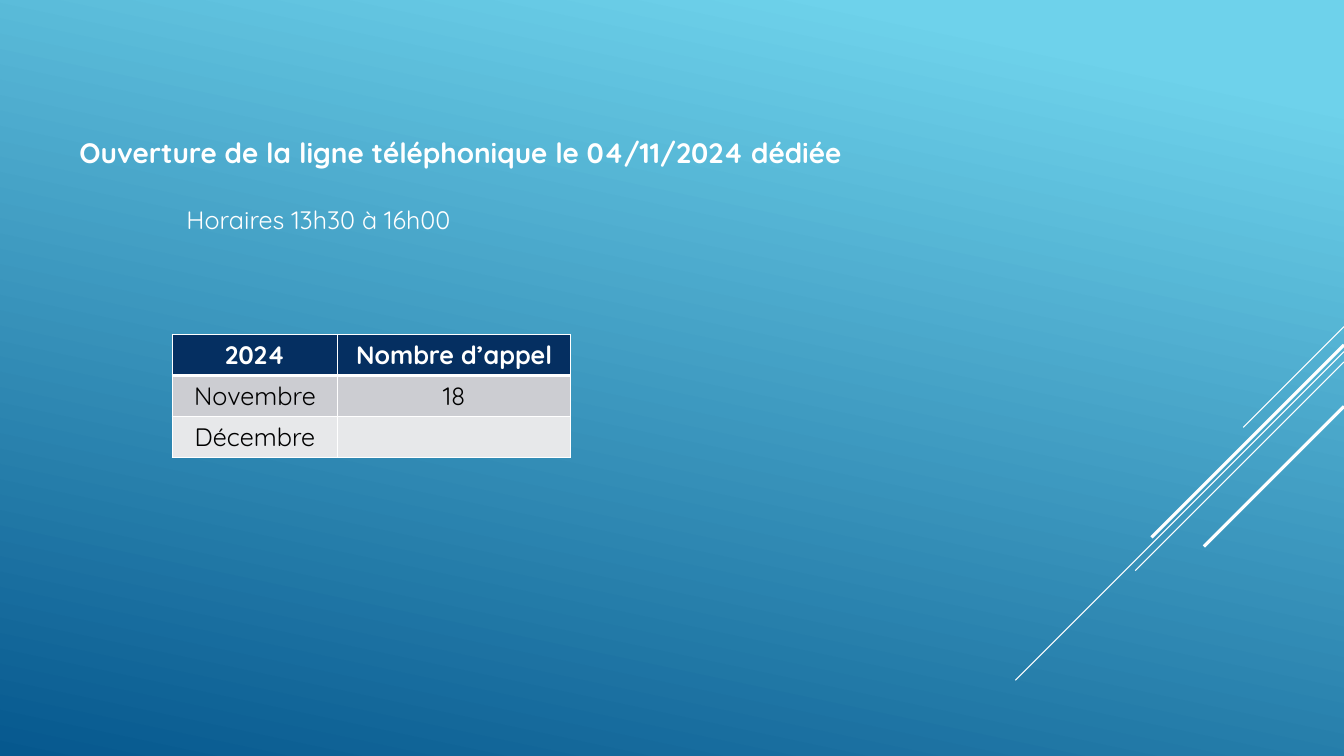
"""Build a slide announcing the opening of a telephone line, with its call counts."""
from dataclasses import dataclass

from lxml import etree
from pptx import Presentation
from pptx.dml.color import RGBColor
from pptx.enum.shapes import MSO_CONNECTOR
from pptx.enum.text import MSO_AUTO_SIZE, PP_ALIGN
from pptx.oxml.ns import qn
from pptx.slide import Slide
from pptx.table import _Cell
from pptx.text.text import TextFrame
from pptx.util import Cm, Pt

STRAIGHT = MSO_CONNECTOR.STRAIGHT
FIT_SHAPE = MSO_AUTO_SIZE.SHAPE_TO_FIT_TEXT
LEFT = PP_ALIGN.LEFT
CENTER = PP_ALIGN.CENTER

WHITE = RGBColor(0xFF, 0xFF, 0xFF)
BLACK = RGBColor(0x00, 0x00, 0x00)
NAVY = RGBColor(0x05, 0x2F, 0x61)
DARK_BAND = RGBColor(0xCC, 0xCD, 0xD2)
LIGHT_BAND = RGBColor(0xE7, 0xE8, 0xEA)
SKY = RGBColor(0x6E, 0xD2, 0xEB)
DEEP_BLUE = RGBColor(0x06, 0x58, 0x8E)

FONT = "Quicksand"
SLIDE_WIDTH = 33.87
SLIDE_HEIGHT = 19.05
ROW_HEIGHT = 1.03
COLUMN_WIDTHS = (4.17, 5.87)


@dataclass(frozen=True)
class Diagonal:
    """A 45-degree line running down and left from the right edge."""

    top: float
    run: float
    weight: float


@dataclass(frozen=True)
class Label:
    """A line of text with its box in centimetres."""

    text: str
    left: float
    top: float
    width: float
    height: float
    size: int
    bold: bool


@dataclass(frozen=True)
class CallRow:
    """A table row with its colours and border weights."""

    texts: tuple[str, str]
    fill: RGBColor
    color: RGBColor
    bold: bool
    top_border: int
    bottom_border: int


DIAGONALS = (
    Diagonal(8.23, 2.54, 0.75),
    Diagonal(8.86, 8.28, 0.75),
    Diagonal(9.12, 5.26, 0.75),
    Diagonal(8.69, 4.85, 2.25),
    Diagonal(10.24, 3.53, 2.25),
)
LABELS = (
    Label("Ouverture de la ligne téléphonique le 04/11/2024 dédiée",
          1.75, 3.28, 25.27, 1.11, 20, True),
    Label("Horaires 13h30 à 16h00", 4.45, 5.03, 8.1, 1.03, 18, False),
)
CALL_ROWS = (
    CallRow(("2024", "Nombre d’appel"), NAVY, WHITE, True, 1, 3),
    CallRow(("Novembre", "18"), DARK_BAND, BLACK, False, 3, 1),
    CallRow(("Décembre", ""), LIGHT_BAND, BLACK, False, 1, 1),
)


def write_text(frame: TextFrame, text: str, *, size: int, color: RGBColor,
               bold: bool = False, align: PP_ALIGN = LEFT) -> None:
    """Write one formatted paragraph into a text frame."""
    paragraph = frame.paragraphs[0]
    paragraph.alignment = align
    if not text:
        paragraph.font.size = Pt(size)
        return
    run = paragraph.add_run()
    run.text = text
    run.font.name = FONT
    run.font.size = Pt(size)
    run.font.bold = bold
    run.font.color.rgb = color


def paint_background(slide: Slide) -> None:
    """Fill the background with a slanted blue gradient."""
    fill = slide.background.fill
    fill.gradient()
    fill.gradient_angle = 258
    for stop, position, color in zip(fill.gradient_stops, (0.1, 1.0), (SKY, DEEP_BLUE)):
        stop.position = position
        stop.color.rgb = color


def draw_diagonal(slide: Slide, diagonal: Diagonal) -> None:
    """Draw one white diagonal line."""
    connector = slide.shapes.add_connector(
        STRAIGHT, Cm(SLIDE_WIDTH), Cm(diagonal.top),
        Cm(SLIDE_WIDTH - diagonal.run), Cm(diagonal.top + diagonal.run))
    connector.line.color.rgb = WHITE
    connector.line.width = Pt(diagonal.weight)
    etree.SubElement(connector._element.spPr, qn("a:effectLst"))


def draw_label(slide: Slide, label: Label) -> None:
    """Draw one text box."""
    box = slide.shapes.add_textbox(
        Cm(label.left), Cm(label.top), Cm(label.width), Cm(label.height))
    box.text_frame.word_wrap = True
    box.text_frame.auto_size = FIT_SHAPE
    write_text(box.text_frame, label.text, size=label.size, color=WHITE, bold=label.bold)


def set_borders(cell: _Cell, top: int, bottom: int) -> None:
    """Give a cell white borders on its four sides."""
    properties = cell._tc.get_or_add_tcPr()
    weights = {"a:lnL": 1, "a:lnR": 1, "a:lnT": top, "a:lnB": bottom}
    for index, (tag, weight) in enumerate(weights.items()):
        border = etree.Element(qn(tag), w=str(Pt(weight)))
        fill = etree.SubElement(border, qn("a:solidFill"))
        etree.SubElement(fill, qn("a:srgbClr"), val=str(WHITE))
        properties.insert(index, border)


def draw_call_table(slide: Slide) -> None:
    """Draw the table of calls per month."""
    table = slide.shapes.add_table(
        len(CALL_ROWS), len(COLUMN_WIDTHS), Cm(4.34), Cm(8.43),
        Cm(sum(COLUMN_WIDTHS)), Cm(ROW_HEIGHT * len(CALL_ROWS))).table
    for column, width in zip(table.columns, COLUMN_WIDTHS):
        column.width = Cm(width)
    for row, call_row in zip(table.rows, CALL_ROWS):
        row.height = Cm(ROW_HEIGHT)
        for cell, text in zip(row.cells, call_row.texts):
            cell.fill.solid()
            cell.fill.fore_color.rgb = call_row.fill
            set_borders(cell, call_row.top_border, call_row.bottom_border)
            write_text(cell.text_frame, text, size=18, color=call_row.color,
                       bold=call_row.bold, align=CENTER)


def main() -> None:
    """Assemble and save the presentation."""
    presentation = Presentation()
    presentation.slide_width = Cm(SLIDE_WIDTH)
    presentation.slide_height = Cm(SLIDE_HEIGHT)
    slide = presentation.slides.add_slide(presentation.slide_layouts[6])
    paint_background(slide)
    for diagonal in DIAGONALS:
        draw_diagonal(slide, diagonal)
    title, schedule = LABELS
    draw_label(slide, title)
    draw_call_table(slide)
    draw_label(slide, schedule)
    presentation.save("out.pptx")


if __name__ == "__main__":
    main()
